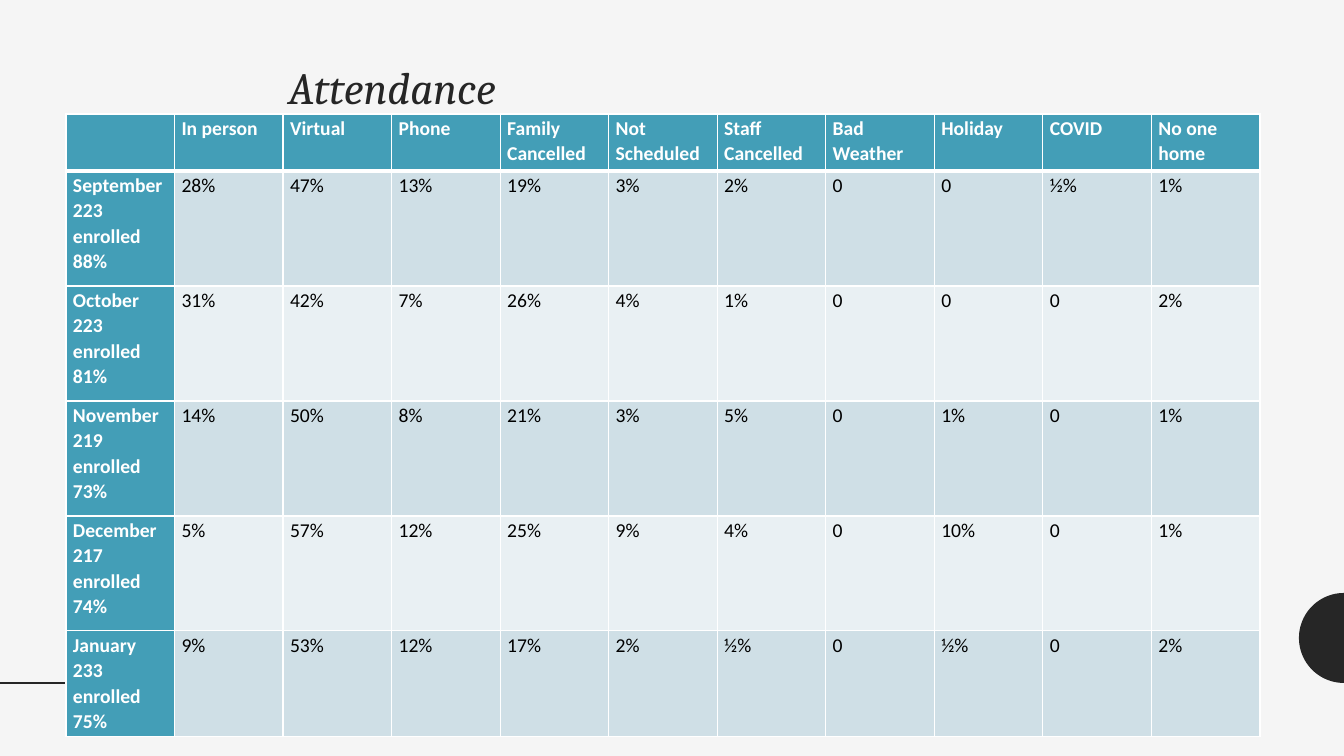
from dataclasses import dataclass
from math import cos, pi, sin

from lxml import etree
from pptx import Presentation
from pptx.dml.color import RGBColor
from pptx.enum.shapes import MSO_CONNECTOR
from pptx.enum.text import MSO_ANCHOR, PP_ALIGN
from pptx.oxml.ns import qn
from pptx.util import Emu, Pt

STRAIGHT = MSO_CONNECTOR.STRAIGHT
TOP = MSO_ANCHOR.TOP
LEFT = PP_ALIGN.LEFT
RIGHT = PP_ALIGN.RIGHT
TITLE_ONLY = 5
SCALE = 914400 / 100.8


@dataclass(frozen=True)
class Theme:
    back: str = "F5F5F5"
    ink: str = "262626"
    head: str = "439EB7"
    bands: tuple = ("CFDFE6", "E9F0F3")
    white: str = "FFFFFF"
    black: str = "000000"
    title_font: str = "Cambria"
    body_font: str = "Calibri"
    title_size: int = 32
    body_size: int = 14


THEME = Theme()

HEADS = ["", "In person", "Virtual", "Phone", "Family Cancelled", "Not Scheduled",
         "Staff Cancelled", "Bad Weather", "Holiday", "COVID", "No one home"]
MONTHS = [
    ["September\n223\nenrolled\n88%", "28%", "47%", "13%", "19%", "3%", "2%", "0", "0", "½%", "1%"],
    ["October\n223 enrolled\n81%", "31%", "42%", "7%", "26%", "4%", "1%", "0", "0", "0", "2%"],
    ["November\n219 enrolled\n73%", "14%", "50%", "8%", "21%", "3%", "5%", "0", "1%", "0", "1%"],
    ["December\n217 enrolled\n74%", "5%", "57%", "12%", "25%", "9%", "4%", "0", "10%", "0", "1%"],
    ["January\n233 enrolled\n75%", "9%", "53%", "12%", "17%", "2%", "½%", "0", "½%", "0", "2%"],
]
HEIGHTS = [57, 115, 115, 115, 115, 106]


def px(count):
    return Emu(round(count * SCALE))


def rgb(code):
    return RGBColor.from_string(code)


def set_font(para, name, size, color, bold=False, italic=False):
    font = para.font
    font.name, font.size = name, Pt(size)
    font.bold, font.italic = bold, italic
    font.color.rgb = rgb(color)


def add_title(slide, text, left, top, width, height):
    title = slide.shapes.title
    title.left, title.top = px(left), px(top)
    title.width, title.height = px(width), px(height)
    title.text = text
    title.text_frame.vertical_anchor = TOP
    para = title.text_frame.paragraphs[0]
    para.alignment = RIGHT
    para.line_spacing = 0.9
    set_font(para, THEME.title_font, THEME.title_size, THEME.ink, italic=True)


def add_half(slide, mid_x, mid_y, radius, steps=48):
    angles = [pi / 2 + pi * step / steps for step in range(steps + 1)]
    points = [(px(mid_x + radius * cos(a)), px(mid_y + radius * sin(a))) for a in angles]
    outline = slide.shapes.build_freeform(*points[0])
    outline.add_line_segments(points[1:], close=True)
    half = outline.convert_to_shape()
    half.shadow.inherit = False
    half.fill.solid()
    half.fill.fore_color.rgb = rgb(THEME.ink)
    half.line.fill.background()


def add_rule(slide, left, right, top):
    rule = slide.shapes.add_connector(STRAIGHT, px(left), px(top), px(right), px(top))
    rule.line.color.rgb = rgb(THEME.ink)
    rule.line.width = Pt(2)
    etree.SubElement(rule._element.spPr, qn("a:effectLst"))


def add_edge(cell, side, width):
    props = cell._tc.get_or_add_tcPr()
    edge = etree.SubElement(props, qn(f"a:ln{side}"), w=str(Pt(width)))
    fill = etree.SubElement(edge, qn("a:solidFill"))
    etree.SubElement(fill, qn("a:srgbClr"), val=THEME.white)


def fill_cell(cell, text, row, col):
    is_head = row == 0 or col == 0
    thick = {(0, "B"), (1, "T")}
    for side in "LRTB":
        add_edge(cell, side, 3 if (row, side) in thick else 1)
    cell.fill.solid()
    cell.fill.fore_color.rgb = rgb(THEME.head if is_head else THEME.bands[(row - 1) % 2])
    cell.margin_left = cell.margin_right = px(7)
    cell.margin_top, cell.margin_bottom = px(1), px(0)
    cell.vertical_anchor = TOP
    cell.text = text
    color = THEME.white if is_head else THEME.black
    for para in cell.text_frame.paragraphs:
        para.alignment = LEFT
        para.line_spacing = 1.07
        set_font(para, THEME.body_font, THEME.body_size, color, bold=is_head)


def add_grid(slide, rows, heights, left, top, width):
    count = len(rows[0])
    frame = slide.shapes.add_table(len(rows), count, px(left), px(top),
                                   px(width), px(sum(heights)))
    table = frame.table
    table.first_col = True
    for column in table.columns:
        column.width = px(width / count)
    for row, (texts, height) in enumerate(zip(rows, heights)):
        table.rows[row].height = px(height)
        for col, text in enumerate(texts):
            fill_cell(table.cell(row, col), text, row, col)


def main():
    deck = Presentation()
    deck.slide_width, deck.slide_height = px(1344), px(756)
    slide = deck.slides.add_slide(deck.slide_layouts[TITLE_ONLY])
    slide.background.fill.solid()
    slide.background.fill.fore_color.rgb = rgb(THEME.back)
    add_half(slide, 1344, 638, 45)
    add_rule(slide, 0, 496, 683)
    add_title(slide, "Attendance", 84, 61, 422, 90)
    add_grid(slide, [HEADS] + MONTHS, HEIGHTS, 66, 114, 1194)
    deck.save("out.pptx")


if __name__ == "__main__":
    main()
